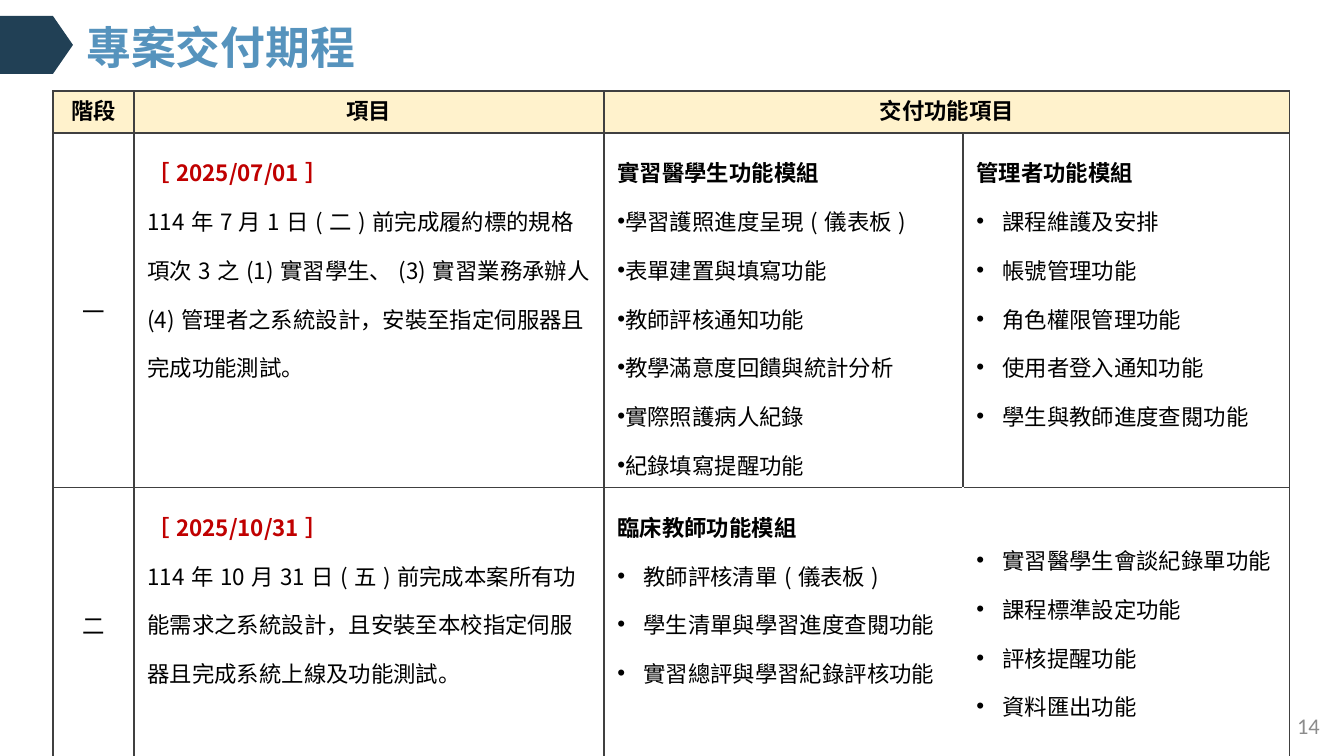
from dataclasses import dataclass

from lxml.etree import SubElement
from pptx import Presentation
from pptx.dml.color import RGBColor
from pptx.enum.text import MSO_ANCHOR as Anchor, PP_ALIGN as Align
from pptx.oxml import parse_xml
from pptx.oxml.ns import nsdecls, qn
from pptx.util import Pt

SCALE = 914400 / 134.4


def px(length):
    """Turn a length in px into EMU."""
    return round(length * SCALE)


@dataclass(frozen=True)
class Theme:
    """Colours, fonts and type sizes of the slide."""
    navy: str = "214055"
    title: str = "5693BD"
    header: str = "FFF2CC"
    grid: str = "404040"
    white: str = "FFFFFF"
    text: str = "000000"
    date: str = "C00000"
    number: str = "8C8C8C"
    latin: str = "Calibri"
    heading: str = "Noto Sans CJK TC"
    body: str = "Noto Sans CJK SC"
    title_size: int = 24
    text_size: int = 12


@dataclass(frozen=True)
class Line:
    """One paragraph and how it looks."""
    text: str
    font: str
    color: str = Theme.text
    size: int = Theme.text_size
    bold: bool = False
    align: Align = Align.LEFT
    spacing: float = 1.0
    bullet: bool = False
    indent: int = 0
    tab: int = 0


class SlideBuilder:
    """Holds the theme and the current slide and draws each kind of element."""

    def __init__(self, slide, theme):
        self.slide = slide
        self.theme = theme

    def fill_text(self, frame, lines):
        """Fill a text frame with lines."""
        frame.word_wrap = True
        for index, line in enumerate(lines):
            paragraph = frame.paragraphs[0] if index == 0 else frame.add_paragraph()
            paragraph.text = line.text
            paragraph.alignment = line.align
            paragraph.line_spacing = line.spacing
            properties = paragraph._p.get_or_add_pPr()
            if line.bullet:
                properties.set("marL", str(px(line.indent)))
                properties.set("indent", str(px(-26)))
                SubElement(properties, qn("a:buFont"), typeface="Arial")
                SubElement(properties, qn("a:buChar"), char="•")
            if line.tab:
                tabs = SubElement(properties, qn("a:tabLst"))
                SubElement(tabs, qn("a:tab"), pos=str(px(line.tab)), algn="l")
            font = paragraph.font
            font.name, font.size, font.bold = line.font, Pt(line.size), line.bold
            font.color.rgb = RGBColor.from_string(line.color)
            SubElement(properties.find(qn("a:defRPr")), qn("a:ea"), typeface=line.font)

    def text(self, left, top, width, height, line):
        """Add a vertically centred text box."""
        box = self.slide.shapes.add_textbox(px(left), px(top), px(width), px(height))
        box.text_frame.vertical_anchor = Anchor.MIDDLE
        self.fill_text(box.text_frame, [line])

    def outline(self, points, color):
        """Add a filled polygon."""
        builder = self.slide.shapes.build_freeform(*points[0], scale=SCALE)
        builder.add_line_segments(points[1:], close=True)
        shape = builder.convert_to_shape()
        shape.shadow.inherit = False
        shape.fill.solid()
        shape.fill.fore_color.rgb = RGBColor.from_string(color)
        shape.line.fill.background()

    def table(self, left, top, columns, rows):
        """Add an unstyled table with the given column and row sizes."""
        frame = self.slide.shapes.add_table(
            len(rows), len(columns), px(left), px(top), px(sum(columns)), px(sum(rows)))
        table = frame.table
        table.first_row = table.horz_banding = False
        for column, width in zip(table.columns, columns):
            column.width = px(width)
        for row, height in zip(table.rows, rows):
            row.height = px(height)
        return table

    def cell(self, cell, lines, fill=None, anchor=Anchor.TOP, hidden=""):
        """Fill a cell and draw its borders, with the hidden sides in white."""
        cell.vertical_anchor = anchor
        if fill:
            cell.fill.solid()
            cell.fill.fore_color.rgb = RGBColor.from_string(fill)
        else:
            cell.fill.background()
        properties = cell._tc.get_or_add_tcPr()
        for index, side in enumerate("LRTB"):
            color, width = (self.theme.white, 1) if side in hidden else (self.theme.grid, 0.75)
            properties.insert(index, parse_xml(
                f'<a:ln{side} {nsdecls("a")} w="{int(Pt(width))}"><a:solidFill>'
                f'<a:srgbClr val="{color}"/></a:solidFill></a:ln{side}>'))
        self.fill_text(cell.text_frame, lines)


def stage_lines(theme, date, text):
    """Return the due date and description of a stage."""
    return [Line(f"［{date}］", theme.heading, theme.date, bold=True, spacing=1.5),
            Line(text, theme.heading, spacing=1.5)]


def module_lines(theme, heading, items, indent=26):
    """Return an optional module heading and its bulleted functions."""
    lines = [Line(heading, theme.heading, bold=True, spacing=1.5, tab=11)] if heading else []
    return lines + [Line(item, theme.body, spacing=1.5, bullet=True, indent=indent, tab=11)
                    for item in items]


def main():
    """Build the delivery schedule slide."""
    theme = Theme()
    presentation = Presentation()
    presentation.slide_width, presentation.slide_height = px(1344), px(756)
    slide = presentation.slides.add_slide(presentation.slide_layouts[6])
    builder = SlideBuilder(slide, theme)

    builder.outline([(0, 16), (53, 16), (73, 45), (53, 74), (0, 74)], theme.navy)
    table = builder.table(53, 91, [81, 470, 359, 327], [42, 300, 274])
    table.cell(0, 2).merge(table.cell(0, 3))
    for column, heading in enumerate(["階段", "項目", "交付功能項目", ""]):
        lines = [Line(heading, theme.latin, bold=True, align=Align.CENTER)] if heading else []
        builder.cell(table.cell(0, column), lines, theme.header, Anchor.MIDDLE)

    stages = [
        ("一", "2025/07/01",
         "114年7月1日(二)前完成履約標的規格項次3之(1)實習學生、(3)實習業務承辦人"
         "(4)管理者之系統設計，安裝至指定伺服器且完成功能測試。"),
        ("二", "2025/10/31",
         "114年10月31日(五)前完成本案所有功能需求之系統設計，"
         "且安裝至本校指定伺服器且完成系統上線及功能測試。"),
    ]
    for row, (stage, date, text) in enumerate(stages, 1):
        builder.cell(table.cell(row, 0), [Line(stage, theme.heading, align=Align.CENTER)],
                     anchor=Anchor.MIDDLE)
        builder.cell(table.cell(row, 1), stage_lines(theme, date, text))

    student = ["學習護照進度呈現(儀表板)", "表單建置與填寫功能", "教師評核通知功能",
               "教學滿意度回饋與統計分析", "實際照護病人紀錄", "紀錄填寫提醒功能"]
    manager = ["課程維護及安排", "帳號管理功能", "角色權限管理功能",
               "使用者登入通知功能", "學生與教師進度查閱功能"]
    teacher = ["教師評核清單(儀表板)", "學生清單與學習進度查閱功能", "實習總評與學習紀錄評核功能"]
    teacher_more = ["實習醫學生會談紀錄單功能", "課程標準設定功能", "評核提醒功能", "資料匯出功能"]
    builder.cell(table.cell(1, 2), module_lines(theme, "實習醫學生功能模組", student, indent=0))
    builder.cell(table.cell(1, 3), module_lines(theme, "管理者功能模組", manager))
    builder.cell(table.cell(2, 2), module_lines(theme, "臨床教師功能模組", teacher), hidden="R")
    builder.cell(table.cell(2, 3), module_lines(theme, "", teacher_more), hidden="L")
    table.cell(2, 3).margin_top = px(40)

    builder.text(73, 9, 1071, 82, Line("專案交付期程", theme.body, theme.title,
                                       theme.title_size, bold=True, spacing=0.9))
    builder.text(1031, 706, 302, 40, Line("14", theme.latin, theme.number, align=Align.RIGHT))
    presentation.save("out.pptx")


if __name__ == "__main__":
    main()
